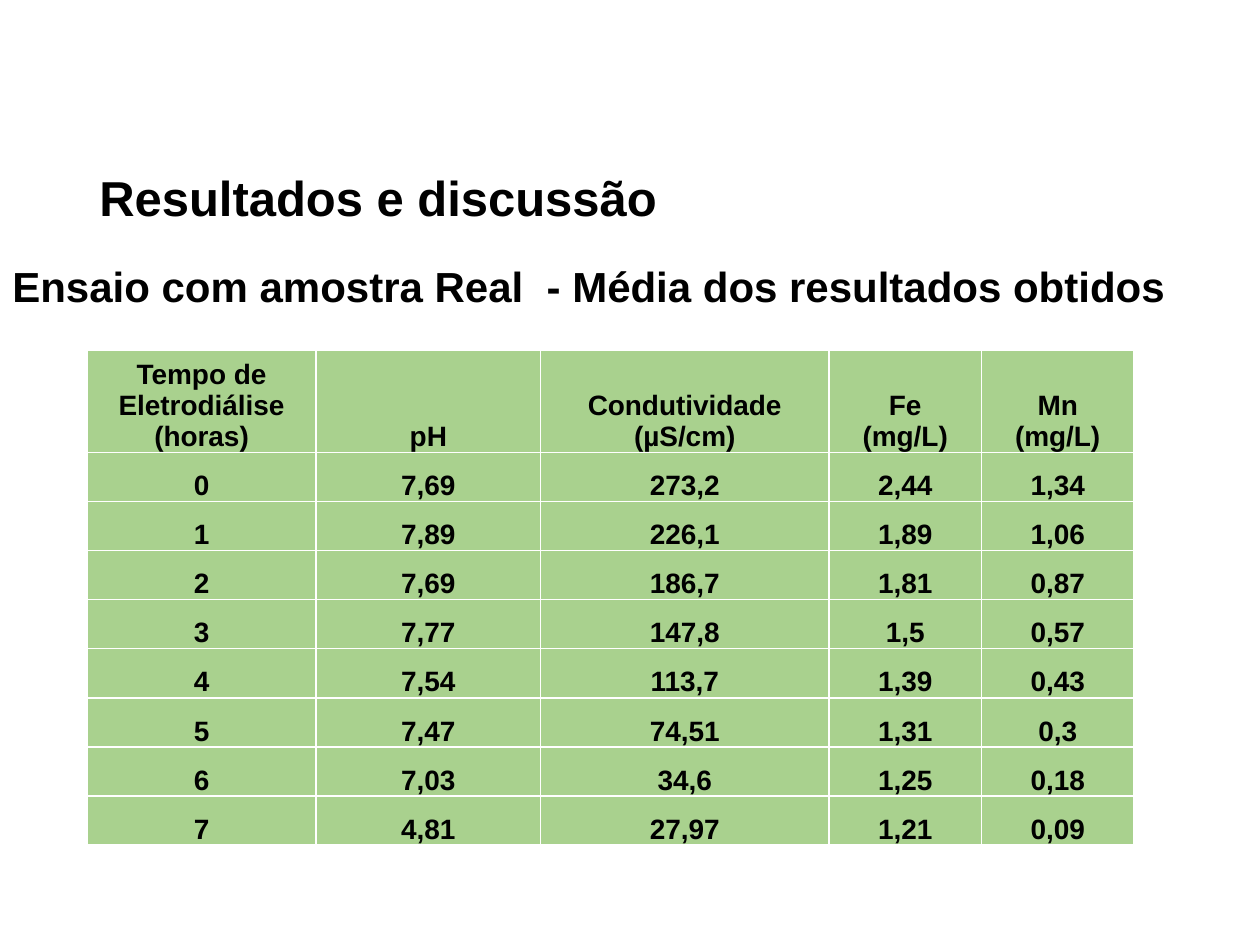
from pptx import Presentation
from pptx.dml.color import RGBColor
from pptx.enum.text import MSO_ANCHOR, PP_ALIGN
from pptx.oxml import parse_xml
from pptx.oxml.ns import nsdecls
from pptx.util import Inches, Pt


def color(value):
    return RGBColor.from_string(value)


def style(para, size):
    para.font.name = "Arial"
    para.font.size = Pt(size)
    para.font.bold = True
    para.font.color.rgb = color("000000")


deck = Presentation()
deck.slide_width = Inches(10)
deck.slide_height = Inches(7.5)
page = deck.slides.add_slide(deck.slide_layouts[6])

headings = [
    ("Ensaio com amostra Real  - Média dos resultados obtidos", 24, 0, 2.06, 10, 4.93, MSO_ANCHOR.TOP),
    ("Resultados e discussão", 28, 0.69, 1.23, 8.62, 0.62, MSO_ANCHOR.BOTTOM),
]
for text, size, left, top, width, height, anchor in headings:
    box = page.shapes.add_textbox(Inches(left), Inches(top), Inches(width), Inches(height))
    box.text_frame.word_wrap = True
    box.text_frame.vertical_anchor = anchor
    para = box.text_frame.paragraphs[0]
    para.text = text
    para.line_spacing = 0.9
    style(para, size)

results = [
    ["Tempo de Eletrodiálise (horas)", "pH", "Condutividade\v(µS/cm)", "Fe\v(mg/L)", "Mn\v(mg/L)"],
    ["0", "7,69", "273,2", "2,44", "1,34"],
    ["1", "7,89", "226,1", "1,89", "1,06"],
    ["2", "7,69", "186,7", "1,81", "0,87"],
    ["3", "7,77", "147,8", "1,5", "0,57"],
    ["4", "7,54", "113,7", "1,39", "0,43"],
    ["5", "7,47", "74,51", "1,31", "0,3"],
    ["6", "7,03", "34,6", "1,25", "0,18"],
    ["7", "4,81", "27,97", "1,21", "0,09"],
]
column_widths = [1.82, 1.78, 2.29, 1.21, 1.21]
table = page.shapes.add_table(
    len(results), len(column_widths), Inches(0.69), Inches(2.78), Inches(8.31), Inches(3.94)
).table
for column, width in zip(table.columns, column_widths):
    column.width = Inches(width)

for index, (row, values) in enumerate(zip(table.rows, results)):
    row.height = Inches(0.39 if index else 0.81)
    for cell, value in zip(row.cells, values):
        cell.margin_left = cell.margin_right = cell.margin_top = Inches(0.01)
        cell.margin_bottom = 0
        cell.vertical_anchor = MSO_ANCHOR.BOTTOM
        para = cell.text_frame.paragraphs[0]
        para.text = value
        para.alignment = PP_ALIGN.CENTER
        style(para, 16)
        properties = cell._tc.get_or_add_tcPr()
        for side in ("lnL", "lnR", "lnT", "lnB"):
            properties.append(parse_xml(
                f'<a:{side} {nsdecls("a")} w="12700"><a:solidFill>'
                f'<a:srgbClr val="FFFFFF"/></a:solidFill></a:{side}>'
            ))
        cell.fill.solid()
        cell.fill.fore_color.rgb = color("A9D18E")

deck.save("out.pptx")
